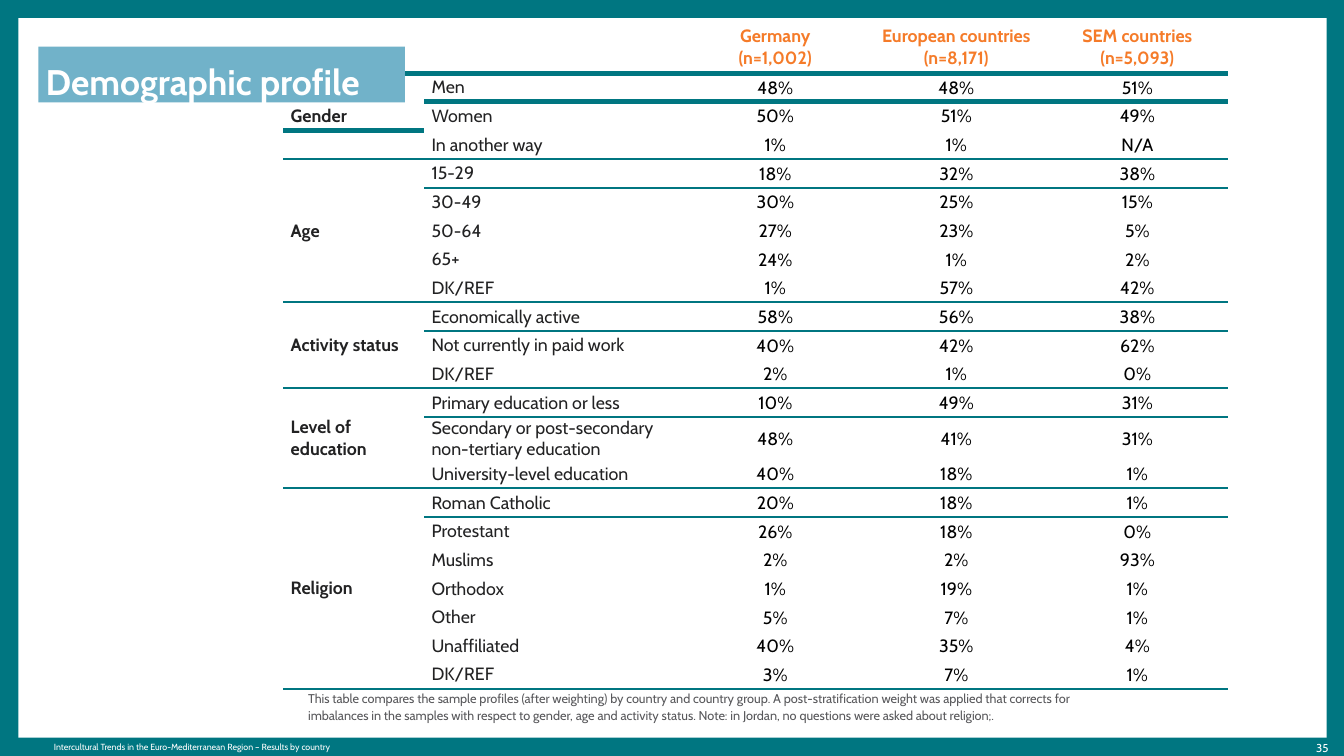
"""Build the demographic profile slide."""
import pptx
import pptx.util
import pptx.dml.color
import pptx.enum.shapes
import pptx.enum.text
import pptx.oxml
import pptx.oxml.ns

Inches = pptx.util.Inches
Pt = pptx.util.Pt
RGBColor = pptx.dml.color.RGBColor
ALIGN = pptx.enum.text.PP_ALIGN
ANCHOR = pptx.enum.text.MSO_ANCHOR

TEAL = RGBColor(0x00, 0x76, 0x81)
BLUE = RGBColor(0x71, 0xB2, 0xC9)
AMBER = RGBColor(0xF5, 0x7B, 0x29)
WHITE = RGBColor(0xFF, 0xFF, 0xFF)
BLACK = RGBColor(0x00, 0x00, 0x00)
DARK = RGBColor(0x22, 0x22, 0x23)
GREY = RGBColor(0x58, 0x58, 0x5B)

PLAIN = "{2D5ABB26-0587-4C30-8999-92F81FD0307C}"
TIGHT = (0.01, 0.01, 0.01, 0)
ROOMY = (0.08, 0.04, 0.08, 0.04)
FLAT = (0.08, 0, 0.08, 0)
NONE = (0, 0, 0, 0)
THICK, THIN = 4.5, 1.5

WIDTHS = (1.54, 2.85, 1.98, 1.98, 1.98)
TALL = {0: 0.58, 13: 0.46}
ROW = 6.25 / 20
HEADS = ("Germany\n(n=1,002)", "European countries (n=8,171)",
         "SEM countries (n=5,093)")
GROUPS = (
    ("Gender", 2, (
        ("Men", "48%", "48%", "51%"),
        ("Women", "50%", "51%", "49%"),
        ("In another way", "1%", "1%", "N/A"))),
    ("Age", 5, (
        ("15-29", "18%", "32%", "38%"),
        ("30-49", "30%", "25%", "15%"),
        ("50-64", "27%", "23%", "5%"),
        ("65+", "24%", "1%", "2%"),
        ("DK/REF", "1%", "57%", "42%"))),
    ("Activity status", 3, (
        ("Economically active", "58%", "56%", "38%"),
        ("Not currently in paid work", "40%", "42%", "62%"),
        ("DK/REF", "2%", "1%", "0%"))),
    ("Level of education", 3, (
        ("Primary education or less", "10%", "49%", "31%"),
        ("Secondary or post-secondary non-tertiary education",
         "48%", "41%", "31%"),
        ("University-level education", "40%", "18%", "1%"))),
    ("Religion", 7, (
        ("Roman Catholic", "20%", "18%", "1%"),
        ("Protestant", "26%", "18%", "0%"),
        ("Muslims", "2%", "2%", "93%"),
        ("Orthodox", "1%", "19%", "1%"),
        ("Other", "5%", "7%", "1%"),
        ("Unaffiliated", "40%", "35%", "4%"),
        ("DK/REF", "3%", "7%", "1%"))),
)
NOTE = ("This table compares the sample profiles (after weighting) by country "
        "and country group. A post-stratification weight was applied that "
        "corrects for imbalances in the samples with respect to gender, age "
        "and activity status. Note: in Jordan, no questions were asked about "
        "religion;.")
FOOT = ("Intercultural Trends in the Euro-Mediterranean Region – "
        "Results by country")


def apply(item, **form):
    """Set each format value on the item."""
    for name, value in form.items():
        setattr(item, name, value)


def pad(item, sides):
    """Set the four margins of a cell or text frame."""
    for side, size in zip(("left", "top", "right", "bottom"), sides):
        setattr(item, "margin_" + side, Inches(size))


def write(frame, text, size, color, bold=False, **form):
    """Fill a text frame, one paragraph to each line."""
    frame.word_wrap = True
    frame.text = text
    for para in frame.paragraphs:
        apply(para, **form)
        for run in para.runs:
            apply(run.font, name="Cabin", size=Pt(size), bold=bold)
            run.font.color.rgb = color


def panel(slide, box, color):
    """Add a plain filled rectangle."""
    kind = pptx.enum.shapes.MSO_SHAPE.RECTANGLE
    shape = slide.shapes.add_shape(kind, *map(Inches, box))
    shape.shadow.inherit = False
    shape.fill.solid()
    shape.fill.fore_color.rgb = color
    shape.line.fill.background()
    return shape


def label(slide, box, text, size, color, anchor, **form):
    """Add a text box without margins."""
    frame = slide.shapes.add_textbox(*map(Inches, box)).text_frame
    pad(frame, NONE)
    frame.vertical_anchor = anchor
    write(frame, text, size, color, **form)


def fill(cell, text, color, sides, bold=False, anchor=ANCHOR.MIDDLE, **form):
    """Write one table cell."""
    pad(cell, sides)
    cell.vertical_anchor = anchor
    write(cell.text_frame, text, 14, color, bold, **form)


def rule(cell, side, width):
    """Draw a teal border on the top (T) or bottom (B) of a cell."""
    space = pptx.oxml.ns.nsdecls("a")
    line = pptx.oxml.parse_xml(
        f'<a:ln{side} {space} w="{Pt(width)}"><a:solidFill>'
        f'<a:srgbClr val="{TEAL}"/></a:solidFill></a:ln{side}>')
    cell._tc.get_or_add_tcPr().insert(0, line)


def clear(cell):
    """Give a cell no fill and a small empty line."""
    cell.fill.background()
    pad(cell, NONE)
    para = cell.text_frame.paragraphs[0]
    para._p.get_or_add_endParaRPr().set("sz", "1400")


def group(table, first, name, span, rows):
    """Write one group of rows with its merged heading."""
    last = first + len(rows) - 1
    head = table.cell(first, 0)
    whole = span == len(rows)
    head.merge(table.cell(first + span - 1, 0))
    fill(head, name, DARK, ROOMY, True,
         ANCHOR.MIDDLE if whole else ANCHOR.BOTTOM)
    for row, (title, *values) in enumerate(rows, first):
        sides = FLAT if row in TALL else ROOMY
        fill(table.cell(row, 1), title, DARK, sides)
        for col, value in enumerate(values, 2):
            fill(table.cell(row, col), value, BLACK, TIGHT,
                 alignment=ALIGN.CENTER)
    if whole:
        rule(head, "B", THIN)
    for col in range(len(WIDTHS)):
        rule(table.cell(last, col), "B", THIN)
        rule(table.cell(first, col), "T", THICK if first == 1 else THIN)


def grid(slide):
    """Add the profile table."""
    count = 1 + sum(len(rows) for name, span, rows in GROUPS)
    box = map(Inches, (3.1, 0.22, sum(WIDTHS), 7.29))
    table = slide.shapes.add_table(count, len(WIDTHS), *box).table
    apply(table, first_row=False, horz_banding=False)
    table._tbl.tblPr[0].text = PLAIN
    for col, width in zip(table.columns, WIDTHS):
        col.width = Inches(width)
    for num, row in enumerate(table.rows):
        row.height = Inches(TALL.get(num, ROW))
    for cell in table.iter_cells():
        clear(cell)
    for col, text in enumerate(HEADS, 2):
        fill(table.cell(0, col), text, AMBER, TIGHT, True,
             alignment=ALIGN.CENTER)
    for col in range(len(WIDTHS)):
        rule(table.cell(0, col), "B", THICK)
    first = 1
    for name, span, rows in GROUPS:
        group(table, first, name, span, rows)
        first += len(rows)


def main():
    """Build and save the slide."""
    deck = pptx.Presentation()
    apply(deck, slide_width=Inches(14.7), slide_height=Inches(8.27))
    slide = deck.slides.add_slide(deck.slide_layouts[6])
    slide.background.fill.solid()
    slide.background.fill.fore_color.rgb = TEAL
    panel(slide, (0.2, 0.2, 14.31, 7.87), WHITE)
    label(slide, (14.06, 8.09, 0.47, 0.17), "35", 9, WHITE, ANCHOR.TOP,
          alignment=ALIGN.RIGHT, line_spacing=1.1)
    label(slide, (0.59, 8.07, 5.35, 0.2), FOOT, 7, WHITE, ANCHOR.MIDDLE)
    grid(slide)
    label(slide, (3.37, 7.1, 8.98, 0.81), NOTE, 10, GREY, ANCHOR.BOTTOM,
          line_spacing=1.1)
    title = panel(slide, (0.42, 0.51, 4.01, 0.61), BLUE).text_frame
    pad(title, (0.08, 0.04, 0.08, 0))
    title.vertical_anchor = ANCHOR.BOTTOM
    write(title, "Demographic profile", 28, WHITE, True,
          alignment=ALIGN.LEFT, line_spacing=Pt(41))
    deck.save("out.pptx")


if __name__ == "__main__":
    main()
